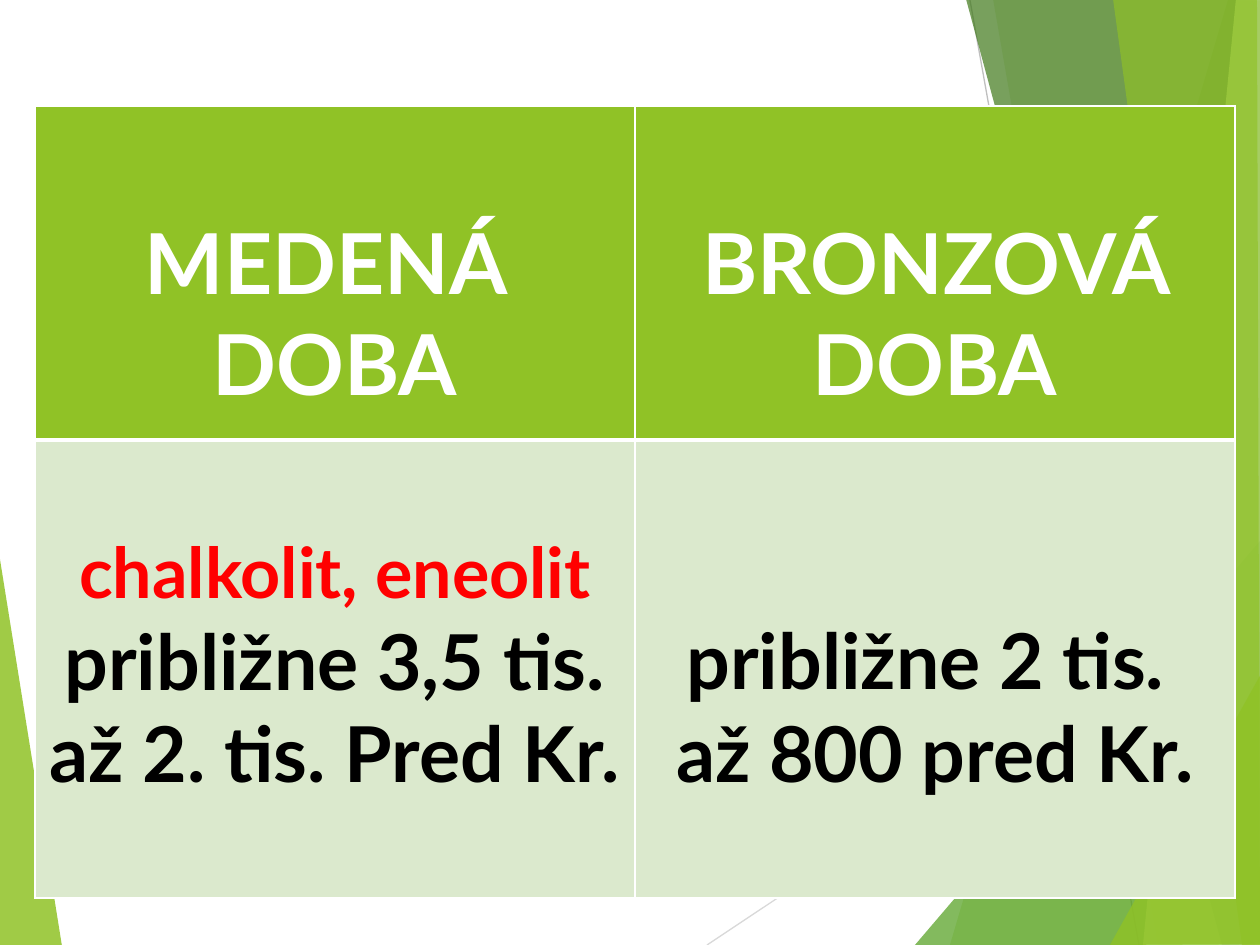
from lxml.etree import SubElement
from pptx import Presentation
from pptx.dml.color import RGBColor
from pptx.enum.shapes import MSO_CONNECTOR
from pptx.enum.text import PP_ALIGN
from pptx.oxml.ns import qn
from pptx.util import Pt

PX = 914400 / 126
COLORS = {
    "lime": "90C226", "green": "54A021", "forest": "3F7819", "pale lime": "C0E474",
    "mint": "DBE9CD", "white": "FFFFFF", "black": "000000", "red": "FF0000",
    "silver": "D9D9D9", "gray": "BFBFBF",
}


def px(length):
    return round(length * PX)


def add_border(cell, side, points):
    line = SubElement(cell._tc.get_or_add_tcPr(), qn(f"a:{side}"), w=str(Pt(points)))
    fill = SubElement(line, qn("a:solidFill"))
    SubElement(fill, qn("a:srgbClr"), val=COLORS["white"])


prs = Presentation()
prs.slide_width, prs.slide_height = px(1260), px(945)
slide = prs.slides.add_slide(prs.slide_layouts[6])

rays = [
    ((707, 945, 1261, 576), "silver"),
    ((970, 0, 1139, 945), "gray"),
]
facets = [
    ([(-1, 553), (62, 946), (-1, 945)], "lime", 85),
    ([(1228, 0), (950, 945), (1262, 946), (1261, 1)], "lime", 30),
    ([(993, -1), (1158, 945), (1261, 945), (1261, -1)], "lime", 20),
    ([(915, 945), (1260, 541), (1261, 945)], "green", 72),
    ([(966, -1), (1222, 945), (1261, 944), (1261, -1)], "forest", 70),
    ([(1236, -1), (1143, 945), (1261, 945), (1260, -1)], "pale lime", 70),
    ([(1113, -1), (1242, 945), (1260, 945), (1257, -1)], "lime", 65),
    ([(1110, 945), (1261, 674), (1261, 944)], "lime", 80),
]

for ends, color in rays:
    ray = slide.shapes.add_connector(MSO_CONNECTOR.STRAIGHT, *map(px, ends))
    ray.line.color.rgb = RGBColor.from_string(COLORS[color])
    ray.line.width = Pt(0.75)
    SubElement(ray._element.spPr, qn("a:effectLst"))

for points, color, opacity in facets:
    builder = slide.shapes.build_freeform(*points[0], scale=PX)
    builder.add_line_segments(points[1:], close=True)
    facet = builder.convert_to_shape()
    facet.shadow.inherit = False
    facet.line.fill.background()
    facet.fill.solid()
    facet.fill.fore_color.rgb = RGBColor.from_string(COLORS[color])
    tint = facet._element.spPr.find(".//" + qn("a:srgbClr"))
    SubElement(tint, qn("a:alpha"), val=str(opacity * 1000))

ages = slide.shapes.add_table(2, 2, px(35), px(106), px(1200), px(792)).table
ages.rows[0].height, ages.rows[1].height = px(334), px(458)

contents = [
    (0, 0, 106, [[("MEDENÁ ", 48, "white")], [("DOBA", 48, "white")]]),
    (0, 1, 106, [[("BRONZOVÁ DOBA", 48, "white")]]),
    (1, 0, 82, [[("chalkolit, eneolit", 40, "red"),
                 (" přibližne 3,5 tis. až 2. tis. Pred Kr.".replace("ř", "r"), 44, "black")]]),
    (1, 1, 174, [[("približne 2 tis. ", 44, "black")], [("až 800 pred Kr.", 44, "black")]]),
]
for row, column, top, paragraphs in contents:
    cell = ages.cell(row, column)
    for side in ("lnL", "lnR", "lnT", "lnB"):
        divider = (row, side) in [(0, "lnB"), (1, "lnT")]
        add_border(cell, side, 3 if divider else 1)
    cell.fill.solid()
    cell.fill.fore_color.rgb = RGBColor.from_string(COLORS["mint" if row else "lime"])
    cell.margin_top = px(top)
    for index, runs in enumerate(paragraphs):
        frame = cell.text_frame
        paragraph = frame.add_paragraph() if index else frame.paragraphs[0]
        paragraph.alignment = PP_ALIGN.CENTER
        paragraph.font.name = "Lato"
        paragraph.font.bold = True
        for text, size, color in runs:
            run = paragraph.add_run()
            run.text = text
            for font in (run.font, paragraph.font) if len(runs) == 1 else (run.font,):
                font.name = "Lato"
                font.bold = True
                font.size = Pt(size)
                font.color.rgb = RGBColor.from_string(COLORS[color])

prs.save("out.pptx")
